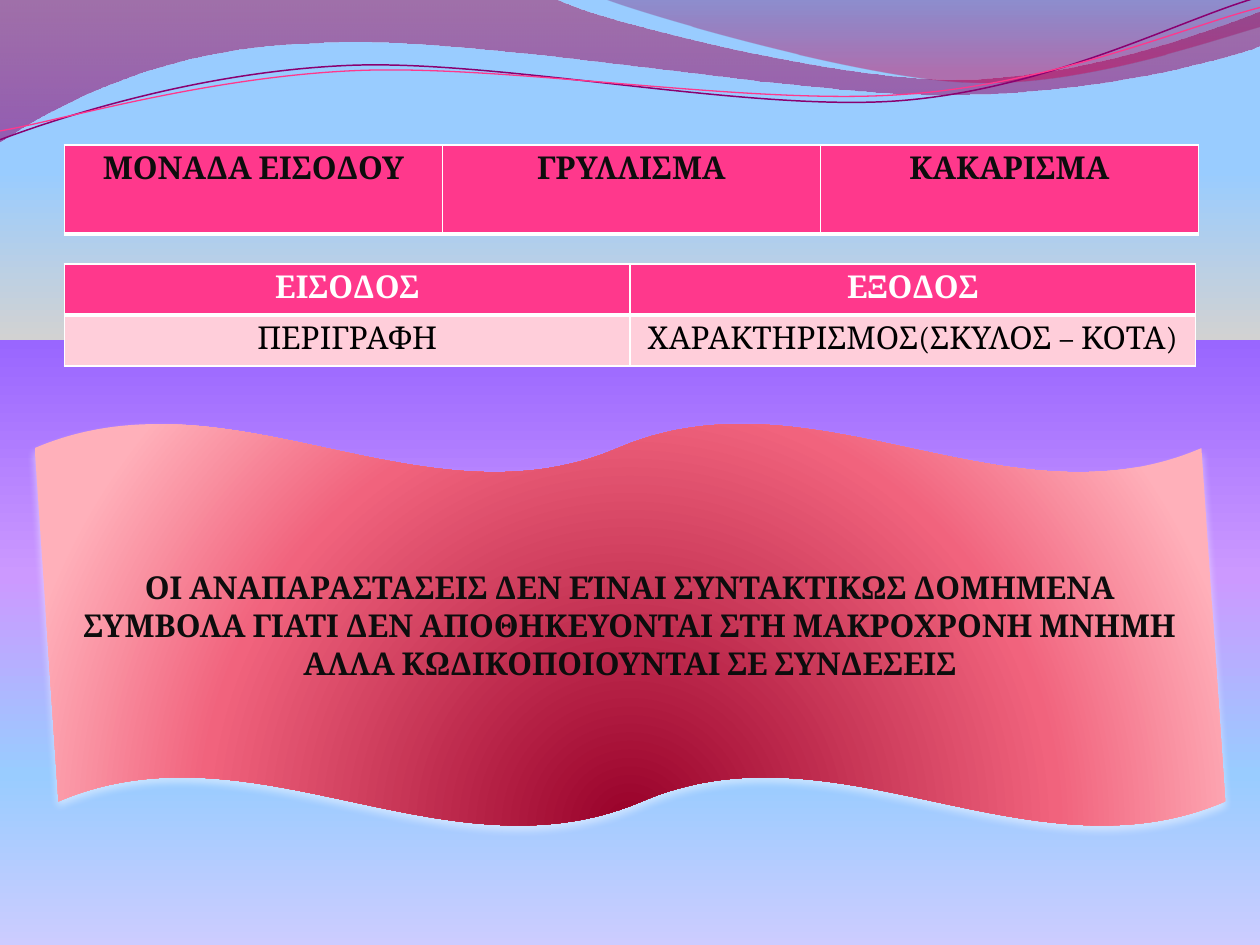
import math

import lxml.etree
import pptx
import pptx.dml.color
import pptx.enum.shapes
import pptx.enum.text
import pptx.oxml.ns
import pptx.util

Cm = pptx.util.Cm
Pt = pptx.util.Pt
qn = pptx.oxml.ns.qn
rgb = pptx.dml.color.RGBColor.from_string


def set_gradient(element, stops, circle=False):
    """Swap the first solid fill for (position, colour, opacity) stops, in percent."""
    solid = element.find(".//" + qn("a:solidFill"))
    gradient = lxml.etree.Element(qn("a:gradFill"), rotWithShape="1")
    stop_list = lxml.etree.SubElement(gradient, qn("a:gsLst"))
    for position, colour, opacity in stops:
        stop = lxml.etree.SubElement(stop_list, qn("a:gs"), pos=str(position * 1000))
        color = lxml.etree.SubElement(stop, qn("a:srgbClr"), val=colour)
        if opacity < 100:
            lxml.etree.SubElement(color, qn("a:alpha"), val=str(opacity * 1000))
    if circle:
        center = lxml.etree.SubElement(gradient, qn("a:path"), path="circle")
        lxml.etree.SubElement(center, qn("a:fillToRect"), l="50000", t="130000", r="50000", b="-30000")
    else:
        lxml.etree.SubElement(gradient, qn("a:lin"), ang="5400000", scaled="0")
    solid.getparent().replace(solid, gradient)


def write_text(frame, text, colour, bold):
    para = frame.paragraphs[0]
    para.alignment = pptx.enum.text.PP_ALIGN.CENTER
    span = para.add_run()
    span.text = text
    for name, value in {"name": "Cambria", "size": Pt(18), "bold": bold}.items():
        setattr(span.font, name, value)
    span.font.color.rgb = rgb(colour)


deck = pptx.Presentation()
deck.slide_width, deck.slide_height = Cm(25.4), Cm(19.05)
page = deck.slides.add_slide(deck.slide_layouts[6])
page.background.fill.solid()
set_gradient(page.element, [
    (18, "99CCFF", 100), (36, "D2D2D2", 100), (36, "9966FF", 100),
    (61, "CC99FF", 100), (82, "99CCFF", 100), (100, "CCCCFF", 100),
])

# Ribbons: a pair is a corner, six numbers are a Bezier curve; one unit is 2.54 cm.
# Steps are places on the page; the frame is left, top, width, height before turning.
ribbons = [
    {"frame": (-0.01, -0.01, 10.02, 1.14), "turn": 0,
     "steps": [(0, 0), (4.4, -0.01), (4.76, 0.17, 6.64, 0.63, 7.58, 0.63),
               (8.53, 0.63, 9.58, 0.26, 10, 0.09), (10.01, 0.36),
               (9.83, 0.44, 8.7, 0.76, 7.46, 0.75), (6.22, 0.75, 3.82, 0.28, 2.57, 0.34),
               (1.29, 0.36, 0.46, 0.83, -0.01, 1.13), (0, 0)],
     "stops": [(0, "A90042", 45), (100, "8E0073", 55)]},
    {"frame": (4.79, -0.01, 5.21, 0.7), "turn": 0,
     "steps": [(4.79, -0.01), (5.09, 0.11, 6.82, 0.62, 7.69, 0.65),
               (8.56, 0.69, 9.61, 0.32, 10, 0.21), (10, 0), (4.79, -0.01)],
     "stops": [(0, "73005E", 30), (80, "C9004F", 45)]},
    {"frame": (-0.02, 0.22, 10.02, 0.71), "turn": 357.3,
     "steps": [(0, 1.11), (0.48, 0.93, 1.58, 0.57, 2.77, 0.52),
               (3.95, 0.47, 5.93, 0.89, 7.13, 0.8), (8.33, 0.71, 9.38, 0.15, 9.98, -0.02)],
     "line": ("8A0070", 0.85)},
    {"frame": (-0.02, 0.3, 10.03, 0.58), "turn": 357.3,
     "steps": [(0, 1.04), (0.47, 0.96, 1.64, 0.61, 2.83, 0.56),
               (4.03, 0.51, 5.97, 0.84, 7.17, 0.75), (8.36, 0.67, 9.41, 0.21, 10, 0.06)],
     "line": ("FF388C", 0.75)},
]
detail = 1000
for ribbon in ribbons:
    left, top, width, height = ribbon["frame"]
    filled = "stops" in ribbon
    cosine, sine = math.cos(math.radians(ribbon["turn"])), math.sin(math.radians(ribbon["turn"]))
    ends = [(step[-2] * detail, step[-1] * detail) for step in ribbon["steps"]]
    builder = page.shapes.build_freeform(*ends[0])
    builder.add_line_segments(ends[1:], close=filled)
    shape = builder.convert_to_shape()
    for name, value in zip(("left", "top", "width", "height"), ribbon["frame"]):
        setattr(shape, name, Cm(value * 2.54))
    shape.rotation = ribbon["turn"]

    outline = shape.element.find(".//" + qn("a:pathLst"))[0]
    outline.set("w", str(round(width * detail)))
    outline.set("h", str(round(height * detail)))
    for command, step in zip(list(outline), ribbon["steps"]):
        if len(step) == 6:
            curve = lxml.etree.Element(qn("a:cubicBezTo"))
            outline.replace(command, curve)
            command = curve
        for point in list(command):
            command.remove(point)
        for x, y in zip(step[::2], step[1::2]):
            across, down = x - left - width / 2, y - top - height / 2
            local_x = across * cosine + down * sine + width / 2
            local_y = down * cosine - across * sine + height / 2
            lxml.etree.SubElement(
                command, qn("a:pt"), x=str(round(local_x * detail)), y=str(round(local_y * detail)))

    shape.shadow.inherit = False
    if filled:
        shape.fill.solid()
        set_gradient(shape.element, ribbon["stops"])
        shape.line.fill.background()
    else:
        colour, thickness = ribbon["line"]
        shape.fill.background()
        shape.line.color.rgb = rgb(colour)
        shape.line.width = Pt(thickness)

header = {"fill": "FF388C", "bold": True}
tables = [
    {"top": 2.92, "width": 22.86, "row_height": 1.8, "rows": [
        {**header, "colour": "0D0D0D", "texts": ["ΜΟΝΑΔΑ ΕΙΣΟΔΟΥ", "ΓΡΥΛΛΙΣΜΑ", "ΚΑΚΑΡΙΣΜΑ"]},
    ]},
    {"top": 5.32, "width": 22.8, "row_height": 1.03, "rows": [
        {**header, "colour": "FFFFFF", "texts": ["ΕΙΣΟΔΟΣ", "ΕΞΟΔΟΣ"]},
        {"fill": "FFCEDA", "bold": False, "colour": "000000",
         "texts": ["ΠΕΡΙΓΡΑΦΗ", "ΧΑΡΑΚΤΗΡΙΣΜΟΣ(ΣΚΥΛΟΣ – ΚΟΤΑ)"]},
    ]},
]
for layout in tables:
    rows = layout["rows"]
    table = page.shapes.add_table(
        len(rows), len(rows[0]["texts"]), Cm(1.3), Cm(layout["top"]),
        Cm(layout["width"]), Cm(layout["row_height"] * len(rows)),
    ).table
    for row_index, row in enumerate(rows):
        # The rule under the header is thick on both sides of the shared edge
        is_header = row_index == 0
        borders = {"lnL": 1, "lnR": 1, "lnT": 1 if is_header else 3, "lnB": 3 if is_header else 1}
        for column_index, text in enumerate(row["texts"]):
            cell = table.cell(row_index, column_index)
            write_text(cell.text_frame, text, row["colour"], row["bold"])
            cell.fill.solid()
            cell.fill.fore_color.rgb = rgb(row["fill"])
            properties = cell._tc.get_or_add_tcPr()
            for order, (side, thickness) in enumerate(borders.items()):
                border = lxml.etree.Element(qn("a:" + side), w=str(Pt(thickness)))
                properties.insert(order, border)
                paint = lxml.etree.SubElement(border, qn("a:solidFill"))
                lxml.etree.SubElement(paint, qn("a:srgbClr"), val="FFFFFF")

wave = page.shapes.add_shape(
    pptx.enum.shapes.MSO_SHAPE.DOUBLE_WAVE, Cm(0.7), Cm(8.53), Cm(24), Cm(8.13))
wave.adjustments[0], wave.adjustments[1] = 0.062, 0.01
wave.fill.solid()
set_gradient(wave.element, [(0, "970029", 100), (68, "F1637D", 100), (100, "FFB0BA", 100)], circle=True)
wave.line.fill.background()
wave.shadow.inherit = False
effects = wave.element.spPr.find(qn("a:effectLst"))
shadow = lxml.etree.SubElement(
    effects, qn("a:outerShdw"), blurRad=str(Pt(4.5)), dist=str(Pt(3)), dir="5400000", rotWithShape="0")
shadow_color = lxml.etree.SubElement(shadow, qn("a:srgbClr"), val="FFFFFF")
lxml.etree.SubElement(shadow_color, qn("a:alpha"), val="48000")
wave.text_frame.word_wrap = True
wave.text_frame.vertical_anchor = pptx.enum.text.MSO_ANCHOR.MIDDLE
write_text(
    wave.text_frame,
    "ΟΙ ΑΝΑΠΑΡΑΣΤΑΣΕΙΣ ΔΕΝ ΕΊΝΑΙ ΣΥΝΤΑΚΤΙΚΩΣ ΔΟΜΗΜΕΝΑ ΣΥΜΒΟΛΑ ΓΙΑΤΙ ΔΕΝ ΑΠΟΘΗΚΕΥΟΝΤΑΙ "
    "ΣΤΗ ΜΑΚΡΟΧΡΟΝΗ ΜΝΗΜΗ ΑΛΛΑ ΚΩΔΙΚΟΠΟΙΟΥΝΤΑΙ ΣΕ ΣΥΝΔΕΣΕΙΣ",
    "0D0D0D", True)

deck.save("out.pptx")
